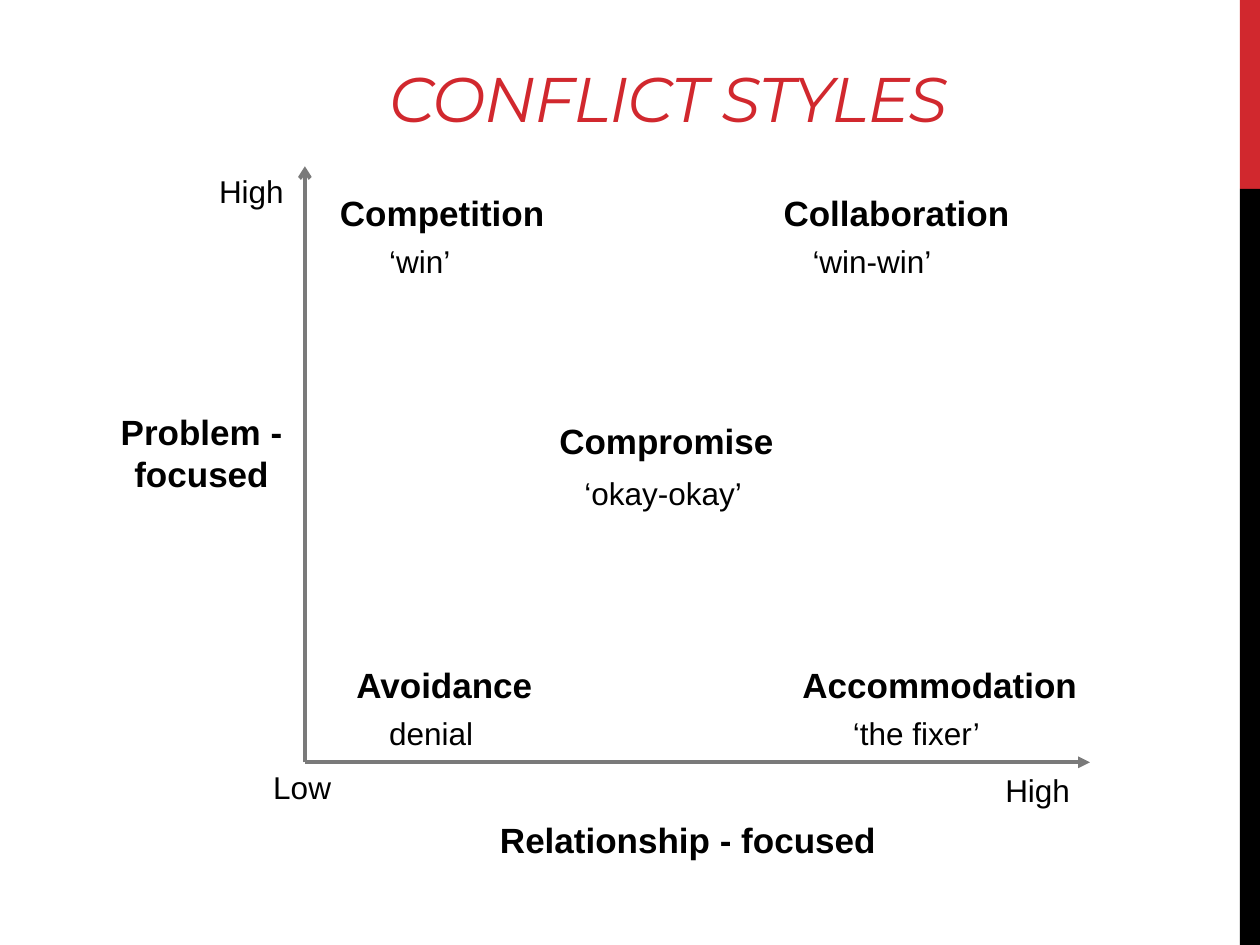
from lxml import etree
from pptx import Presentation
from pptx.dml.color import RGBColor
from pptx.enum.shapes import MSO_CONNECTOR, MSO_SHAPE
from pptx.enum.text import MSO_ANCHOR, PP_ALIGN
from pptx.oxml.ns import qn
from pptx.util import Inches, Pt

RECTANGLE = MSO_SHAPE.RECTANGLE
STRAIGHT = MSO_CONNECTOR.STRAIGHT
BOTTOM = MSO_ANCHOR.BOTTOM
LEFT, CENTER = PP_ALIGN.LEFT, PP_ALIGN.CENTER

COLORS = {"red": "D1282E", "black": "000000", "axis": "7A7A7A"}

# Content: positions and sizes in inches
TITLE = ("CONFLICT STYLES", 2.99, 0.3, 6.51, 0.82)
SIDE_BARS = [("red", 0, 1.5), ("black", 1.5, 6)]  # colour, top, height
BAR_LEFT, BAR_WIDTH = 9.84, 0.16

ORIGIN = (2.42, 6.05)
AXES = [((8.65, 6.05), "triangle"), ((2.42, 1.32), "arrow")]  # end, arrowhead

AXIS_TITLES = [  # text, left, top, width, height, alignment
    ("Problem - focused", 0.85, 3.21, 1.5, 0.77, CENTER),
    ("Relationship - focused", 3.87, 6.45, 3.5, 0.44, LEFT),
]
AXIS_ENDS = [  # text, left, top, width
    ("Low", 2.07, 6.05, 0.82),
    ("High", 1.64, 1.32, 0.96),
    ("High", 7.88, 6.07, 0.92),
]
STYLES = [  # row top, then (text, left, width) of the name and of its motto
    (1.47, ("Competition", 2.6, 1.94), ("‘win’", 2.99, 0.82)),
    (1.47, ("Collaboration", 6.12, 2.12), ("‘win-win’", 6.35, 1.28)),
    (3.28, ("Compromise", 4.34, 2.01), ("‘okay-okay’", 4.54, 1.58)),
    (5.22, ("Avoidance", 2.73, 1.62), ("denial", 2.99, 0.88)),
    (5.22, ("Accommodation", 6.27, 2.38), ("‘the fixer’", 6.67, 1.42)),
]
NAME_HEIGHT, MOTTO_HEIGHT = 0.44, 0.4
MOTTO_OFFSET, CENTER_MOTTO_OFFSET = 0.4, 0.43


def color(name):
    return RGBColor.from_string(COLORS[name])


def add_text(slide, text, left, top, width, height, size=18, bold=False, align=LEFT):
    box = slide.shapes.add_textbox(
        Inches(left), Inches(top), Inches(width), Inches(height))
    box.text_frame.word_wrap = True
    paragraph = box.text_frame.paragraphs[0]
    paragraph.alignment = align
    run = paragraph.add_run()
    run.text = text
    run.font.name = "Arial"
    run.font.size = Pt(size)
    run.font.bold = bold
    run.font.color.rgb = color("black")
    return box


def add_heading(slide, text, left, top, width, height, align=LEFT):
    add_text(slide, text, left, top, width, height, 20, True, align)


def add_title(slide):
    box = add_text(slide, *TITLE, size=36)
    box.text_frame.vertical_anchor = BOTTOM
    run = box.text_frame.paragraphs[0].runs[0]
    run.font.name = "Montserrat"
    run.font.italic = True
    run.font.color.rgb = color("red")
    run.font._element.set("spc", "-60")


def add_bar(slide, fill, top, height):
    bar = slide.shapes.add_shape(
        RECTANGLE, Inches(BAR_LEFT), Inches(top), Inches(BAR_WIDTH), Inches(height))
    bar.shadow.inherit = False
    bar.fill.solid()
    bar.fill.fore_color.rgb = color(fill)
    bar.line.fill.background()


def add_axis(slide, end, arrowhead):
    points = [Inches(value) for value in ORIGIN + end]
    axis = slide.shapes.add_connector(STRAIGHT, *points)
    axis.line.color.rgb = color("axis")
    axis.line.width = Pt(2.25)
    line = axis.line._get_or_add_ln()
    etree.SubElement(line, qn("a:tailEnd"), type=arrowhead)
    etree.SubElement(axis._element.spPr, qn("a:effectLst"))


def main():
    presentation = Presentation()
    presentation.slide_width = Inches(10)
    presentation.slide_height = Inches(7.5)
    slide = presentation.slides.add_slide(presentation.slide_layouts[6])

    # Frame and title
    for bar in SIDE_BARS:
        add_bar(slide, *bar)
    add_title(slide)

    # Axes and their labels
    for end, arrowhead in AXES:
        add_axis(slide, end, arrowhead)
    for axis_title in AXIS_TITLES:
        add_heading(slide, *axis_title)
    for text, left, top, width in AXIS_ENDS:
        add_text(slide, text, left, top, width, MOTTO_HEIGHT)

    # Conflict styles, each with its motto below
    for top, (name, name_left, name_width), (motto, motto_left, motto_width) in STYLES:
        offset = CENTER_MOTTO_OFFSET if name == "Compromise" else MOTTO_OFFSET
        add_heading(slide, name, name_left, top, name_width, NAME_HEIGHT)
        add_text(slide, motto, motto_left, top + offset, motto_width, MOTTO_HEIGHT)

    presentation.save("out.pptx")


if __name__ == "__main__":
    main()
